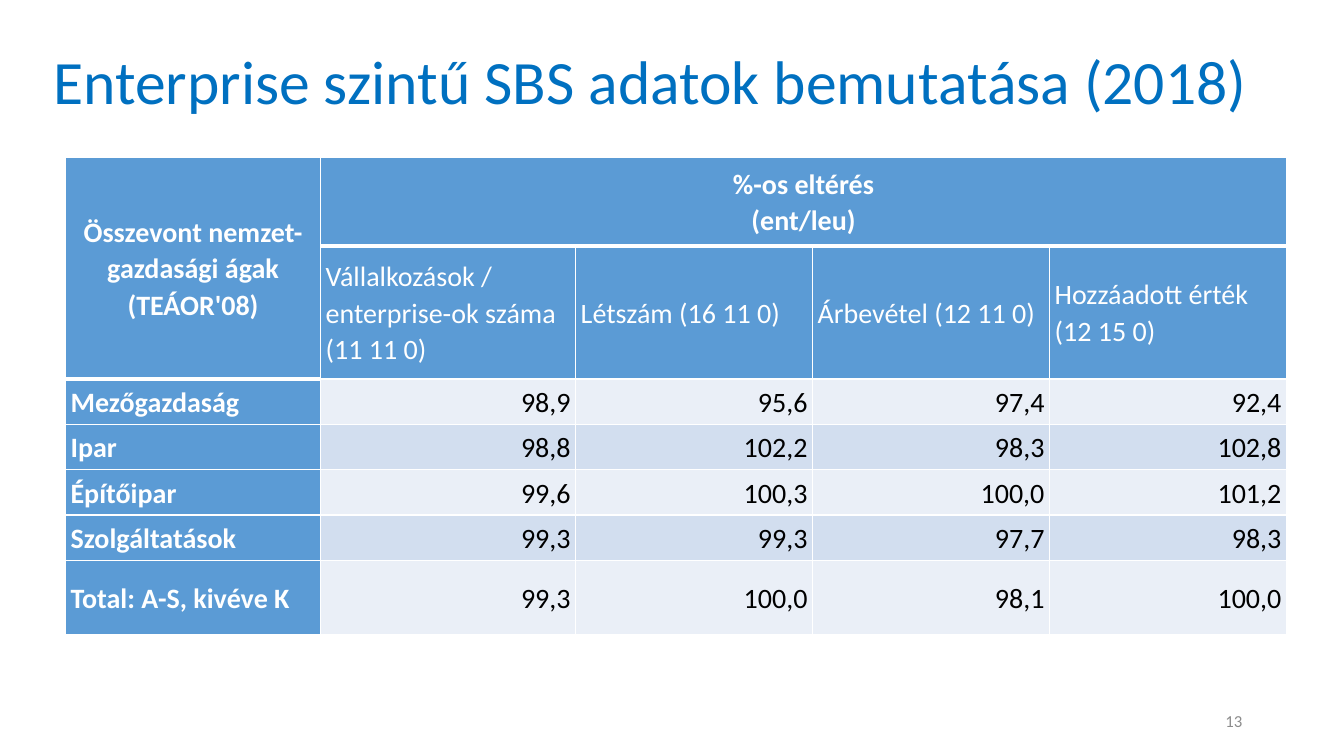
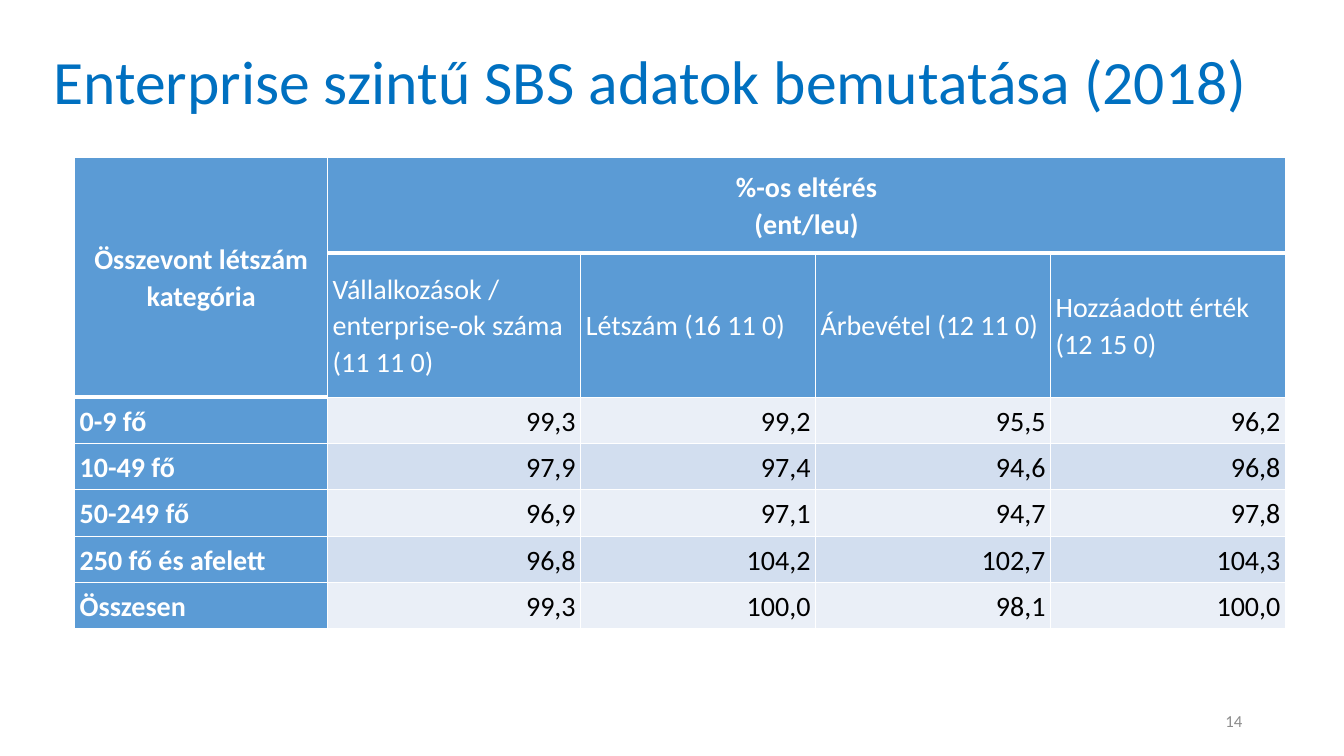
from lxml import etree
from pptx import Presentation
from pptx.dml.color import RGBColor
from pptx.enum.text import MSO_ANCHOR, MSO_AUTO_SIZE, PP_ALIGN
from pptx.oxml.ns import qn
from pptx.util import Inches, Pt

LEFT, CENTER, RIGHT = PP_ALIGN.LEFT, PP_ALIGN.CENTER, PP_ALIGN.RIGHT
MIDDLE = MSO_ANCHOR.MIDDLE
NO_AUTOFIT = MSO_AUTO_SIZE.NONE

FONT = "Calibri"
WHITE, BLACK, TITLE_BLUE, GRAY = "FFFFFF", "000000", "0070C0", "8C8C8C"
HEADER_BLUE = "5B9BD5"
BANDS = ("EAEFF7", "D2DEEF")
THIN, THICK = Pt(1), Pt(3)

TITLE = "Enterprise szintű SBS adatok bemutatása (2018)"
GROUP_HEADING = "%-os eltérés\n(ent/leu)"
MEASURES = [
    "Vállalkozások / enterprise-ok száma (11 11 0)",
    "Létszám (16 11 0)",
    "Árbevétel (12 11 0)",
    "Hozzáadott érték (12 15 0)",
]
TABLE_TOP = 1.56
HEADER_ROWS = 2

SLIDES = [
    {
        "number": "13",
        "heading": "Összevont nemzet-gazdasági ágak (TEÁOR'08)",
        "left": 0.65,
        "columns": [2.53] * 2 + [2.35] * 3,
        "heights": [0.88, 1.32] + [0.45] * 4 + [0.74],
        "rows": [
            ("Mezőgazdaság", "98,9", "95,6", "97,4", "92,4"),
            ("Ipar", "98,8", "102,2", "98,3", "102,8"),
            ("Építőipar", "99,6", "100,3", "100,0", "101,2"),
            ("Szolgáltatások", "99,3", "99,3", "97,7", "98,3"),
            ("Total: A-S, kivéve K", "99,3", "100,0", "98,1", "100,0"),
        ],
    },
    {
        "number": "14",
        "heading": "Összevont létszám kategória",
        "left": 0.74,
        "columns": [2.51] * 2 + [2.33] * 3,
        "heights": [0.95, 1.43] + [0.46] * 5,
        "rows": [
            ("0-9 fő", "99,3", "99,2", "95,5", "96,2"),
            ("10-49 fő", "97,9", "97,4", "94,6", "96,8"),
            ("50-249 fő", "96,9", "97,1", "94,7", "97,8"),
            ("250 fő és afelett", "96,8", "104,2", "102,7", "104,3"),
            ("Összesen", "99,3", "100,0", "98,1", "100,0"),
        ],
    },
]


def set_attributes(target, **values):
    for name, value in values.items():
        setattr(target, name, value)


def color(hex_value):
    return RGBColor.from_string(hex_value)


def write(frame, text, size, hex_value, bold=False, **paragraph_format):
    """Fill a text frame with one formatted paragraph; newlines become line breaks."""
    para = frame.paragraphs[0]
    para.text = text
    set_attributes(para, **paragraph_format)
    for span in para.runs:
        set_attributes(span.font, name=FONT, size=Pt(size), bold=bold)
        span.font.color.rgb = color(hex_value)


def place(shape, left, top, width, height):
    set_attributes(shape, left=Inches(left), top=Inches(top),
                   width=Inches(width), height=Inches(height))
    set_attributes(shape.text_frame, word_wrap=True, auto_size=NO_AUTOFIT,
                   vertical_anchor=MIDDLE)


def lower_border(row, column):
    """Width of the line under a cell: thick below each merged heading."""
    return THICK if row == 0 or (row, column) == (1, 0) else THIN


def add_borders(cell, row, column):
    widths = {
        "a:lnL": THIN,
        "a:lnR": THIN,
        "a:lnT": lower_border(row - 1, column) if row else THIN,
        "a:lnB": lower_border(row, column),
    }
    properties = cell._tc.get_or_add_tcPr()
    for tag, width in widths.items():
        line = etree.SubElement(properties, qn(tag), w=str(int(width)))
        fill = etree.SubElement(line, qn("a:solidFill"))
        etree.SubElement(fill, qn("a:srgbClr"), val=WHITE)


def cell_style(row, column):
    """Return fill, text colour, bold and alignment for a grid position."""
    if row == 0:
        return HEADER_BLUE, WHITE, True, CENTER
    if column == 0:
        return HEADER_BLUE, WHITE, True, LEFT
    if row < HEADER_ROWS:
        return HEADER_BLUE, WHITE, False, LEFT
    return BANDS[(row - HEADER_ROWS) % 2], BLACK, False, RIGHT


def add_data_table(slide, content):
    columns, heights = content["columns"], content["heights"]
    grid = [
        (content["heading"], GROUP_HEADING, "", "", ""),
        ("", *MEASURES),
        *content["rows"],
    ]
    table = slide.shapes.add_table(
        len(grid), len(columns), Inches(content["left"]), Inches(TABLE_TOP),
        Inches(sum(columns)), Inches(sum(heights))).table
    for column, width in zip(table.columns, columns):
        column.width = Inches(width)
    for row, height in zip(table.rows, heights):
        row.height = Inches(height)
    for r, texts in enumerate(grid):
        for c, text in enumerate(texts):
            cell = table.cell(r, c)
            fill, text_color, bold, alignment = cell_style(r, c)
            add_borders(cell, r, c)
            cell.fill.solid()
            cell.fill.fore_color.rgb = color(fill)
            set_attributes(cell, vertical_anchor=MIDDLE,
                           margin_left=Inches(0.05), margin_right=Inches(0.05),
                           margin_top=0, margin_bottom=0)
            write(cell.text_frame, text, 20, text_color, bold,
                  alignment=alignment, line_spacing=1.07, space_after=Pt(8))
    table.cell(0, 0).merge(table.cell(1, 0))
    table.cell(0, 1).merge(table.cell(0, len(columns) - 1))


def add_slide(deck, content):
    slide = deck.slides.add_slide(deck.slide_layouts[5])
    title = slide.shapes.title
    place(title, 0.43, 0.11, 12.18, 1.45)
    write(title.text_frame, TITLE, 44, TITLE_BLUE, alignment=LEFT, line_spacing=0.9)
    number_box = slide.shapes.add_textbox(0, 0, 0, 0)
    place(number_box, 9.42, 6.95, 3, 0.4)
    write(number_box.text_frame, content["number"], 12, GRAY, alignment=RIGHT)
    add_data_table(slide, content)


def main():
    deck = Presentation()
    set_attributes(deck, slide_width=Inches(13.33), slide_height=Inches(7.5))
    for content in SLIDES:
        add_slide(deck, content)
    deck.save("out.pptx")


if __name__ == "__main__":
    main()
